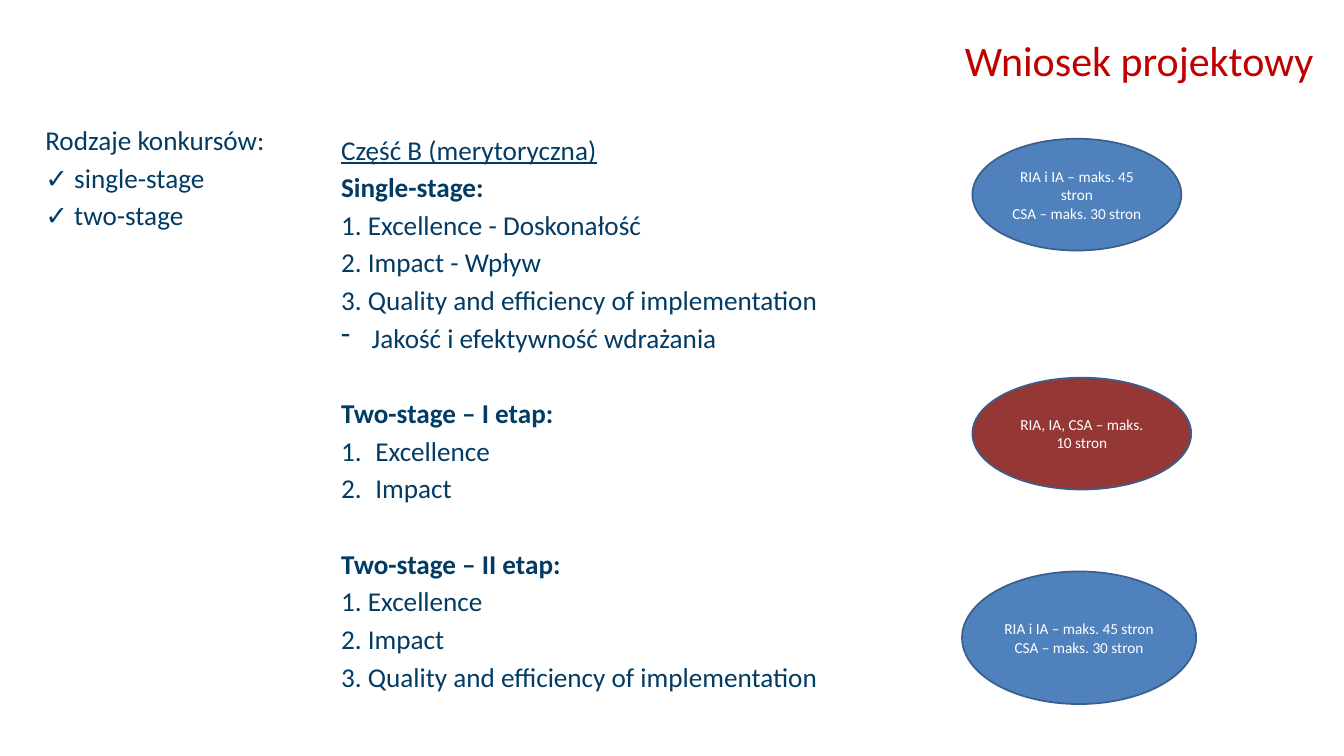
from lxml.etree import SubElement
from pptx import Presentation
from pptx.dml.color import RGBColor
from pptx.enum.shapes import MSO_SHAPE
from pptx.enum.text import MSO_ANCHOR, PP_ALIGN
from pptx.oxml.ns import qn
from pptx.util import Inches, Pt

WIDTH, HEIGHT = Inches(21.99), Inches(12.37)
FONT = "Calibri"
RED = RGBColor(0xC0, 0x00, 0x00)
NAVY = RGBColor(0x02, 0x3B, 0x64)
BLUE = RGBColor(0x4F, 0x81, 0xBD)
MAROON = RGBColor(0x95, 0x37, 0x35)
OUTLINE = RGBColor(0x3A, 0x5F, 0x8C)
WHITE = RGBColor(0xFF, 0xFF, 0xFF)

LINE_GAP = Pt(5.8)
SECTION_GAP = Pt(50.7)
DASH = ("buChar", {"char": "-"}, Inches(0.5))
NUMBER = ("buAutoNum", {"type": "arabicPeriod"}, Inches(0.56))

CONTEST_TYPES = [("Rodzaje konkursów:", {}), ("✓ single-stage", {}), ("✓ two-stage", {})]
PART_B = [
    ("Część B (merytoryczna)", {"underline": True}),
    ("Single-stage:", {"bold": True}),
    ("1. Excellence - Doskonałość", {}),
    ("2. Impact - Wpływ", {}),
    ("3. Quality and efficiency of implementation", {}),
    ("Jakość i efektywność wdrażania", {"bullet": DASH}),
    ("Two-stage – I etap:", {"bold": True, "gap": SECTION_GAP}),
    ("Excellence", {"bullet": NUMBER}),
    ("Impact", {"bullet": NUMBER}),
    ("Two-stage – II etap:", {"bold": True, "gap": SECTION_GAP}),
    ("1. Excellence", {}),
    ("2. Impact", {}),
    ("3. Quality and efficiency of implementation", {}),
]
FULL_LIMITS = ["RIA i IA – maks. 45 stron", "CSA – maks. 30 stron"]
FIRST_STAGE_LIMITS = ["RIA, IA, CSA – maks.", "10 stron"]
PAGE_LIMITS = [
    ((72.35, 18.35, 15.55, 14.79), BLUE, FULL_LIMITS),
    ((72.35, 49.96, 16.28, 14.79), MAROON, FIRST_STAGE_LIMITS),
    ((71.58, 75.59, 17.42, 17.54), BLUE, FULL_LIMITS),
]


def place(left, top, width, height):
    """Turn percentages of the slide into lengths."""
    return (int(WIDTH * left / 100), int(HEIGHT * top / 100),
            int(WIDTH * width / 100), int(HEIGHT * height / 100))


def add_paragraph(frame, index, text, size, color):
    paragraph = frame.add_paragraph() if index else frame.paragraphs[0]
    paragraph.text = text
    paragraph.font.name = FONT
    paragraph.font.size = Pt(size)
    paragraph.font.color.rgb = color
    return paragraph


def set_bullet(paragraph, tag, attributes, indent):
    properties = paragraph._p.get_or_add_pPr()
    properties.set("marL", str(indent))
    properties.set("indent", str(-indent))
    bullet = SubElement(properties, qn(f"a:{tag}"), attributes)
    properties.remove(bullet)
    properties.insert_element_before(bullet, "a:tabLst", "a:defRPr", "a:extLst")


def add_title(slide, box, text):
    frame = slide.shapes.add_textbox(*place(*box)).text_frame
    frame.word_wrap = True
    frame.vertical_anchor = MSO_ANCHOR.MIDDLE
    frame.margin_right = Inches(0.25)
    add_paragraph(frame, 0, text, 49.5, RED).alignment = PP_ALIGN.RIGHT


def add_text_column(slide, box, lines):
    frame = slide.shapes.add_textbox(*place(*box)).text_frame
    frame.word_wrap = True
    frame.margin_left = frame.margin_right = frame.margin_top = frame.margin_bottom = 0
    for index, (text, style) in enumerate(lines):
        paragraph = add_paragraph(frame, index, text, 32, NAVY)
        paragraph.font.bold = style.get("bold", False)
        paragraph.font.underline = style.get("underline", False)
        if index:
            paragraph.space_before = style.get("gap", LINE_GAP)
        if "bullet" in style:
            set_bullet(paragraph, *style["bullet"])


def add_page_limit(slide, box, fill, lines):
    ellipse = slide.shapes.add_shape(MSO_SHAPE.OVAL, *place(*box))
    ellipse.shadow.inherit = False
    ellipse.fill.solid()
    ellipse.fill.fore_color.rgb = fill
    ellipse.line.color.rgb = OUTLINE
    ellipse.line.width = Pt(2)
    frame = ellipse.text_frame
    frame.word_wrap = True
    frame.vertical_anchor = MSO_ANCHOR.MIDDLE
    for index, text in enumerate(lines):
        add_paragraph(frame, index, text, 18, WHITE).alignment = PP_ALIGN.CENTER


def main():
    presentation = Presentation()
    presentation.slide_width, presentation.slide_height = WIDTH, HEIGHT
    slide = presentation.slides.add_slide(presentation.slide_layouts[6])
    add_title(slide, (39.75, 1.46, 59.12, 12.77), "Wniosek projektowy")
    add_text_column(slide, (3.37, 16.33, 27.29, 14.79), CONTEST_TYPES)
    add_text_column(slide, (25.38, 17.62, 39.43, 78.17), PART_B)
    for box, fill, lines in PAGE_LIMITS:
        add_page_limit(slide, box, fill, lines)
    presentation.save("out.pptx")


if __name__ == "__main__":
    main()
